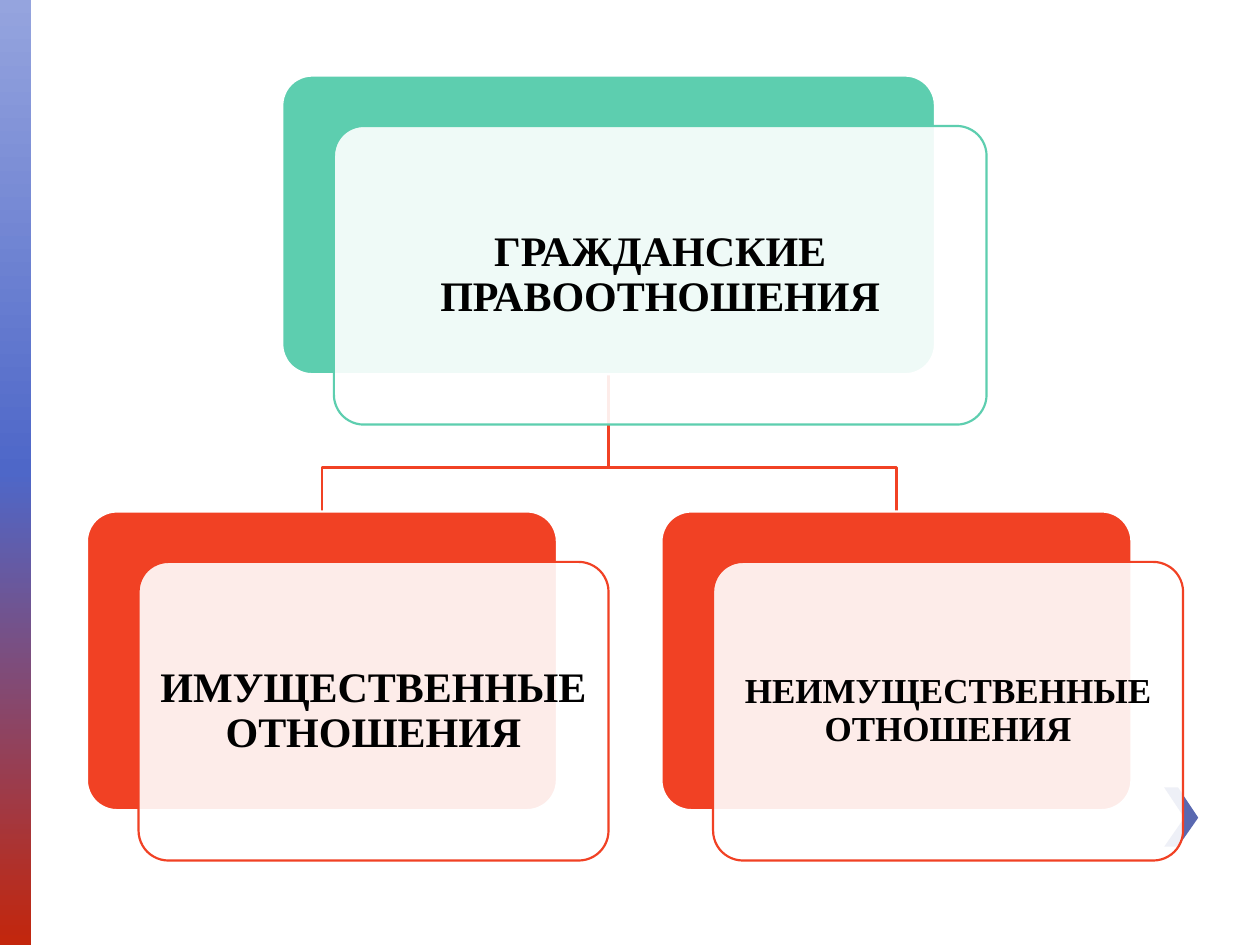
import copy

import lxml.etree
import pptx
import pptx.dml.color
import pptx.enum.shapes
import pptx.enum.text
import pptx.oxml.ns
import pptx.util
from pptx.util import Inches

GREEN, RED, WHITE, BLACK = "5DCEAF", "F14124", "FFFFFF", "000000"
CARD_HEIGHT = 2.37
OFFSET_X, OFFSET_Y = 0.41, 0.4


def color(value):
    return pptx.dml.color.RGBColor.from_string(value)


class DiagramSlide:
    font = "Times New Roman"
    line_width = 1.25

    def __init__(self, slide):
        self.slide = slide

    def outline(self, shape, value):
        shape.line.color.rgb = color(value)
        shape.line.width = pptx.util.Pt(self.line_width)

    def gradient_strip(self, left, top, width, height, stops):
        shape = self.slide.shapes.add_shape(
            pptx.enum.shapes.MSO_SHAPE.RECTANGLE,
            Inches(left), Inches(top), Inches(width), Inches(height))
        shape.shadow.inherit = False
        shape.line.fill.background()
        shape.fill.gradient()
        shape.fill.gradient_angle = 270
        stop_list = shape._element.spPr.find(".//" + pptx.oxml.ns.qn("a:gsLst"))
        while len(stop_list) < len(stops):
            stop_list.append(copy.deepcopy(stop_list[-1]))
        for stop, (position, value) in zip(shape.fill.gradient_stops, stops):
            stop.position = position
            stop.color.rgb = color(value)

    def freeform(self, points, fill=None, line=None):
        start, *others = [(Inches(x), Inches(y)) for x, y in points]
        builder = self.slide.shapes.build_freeform(*start)
        builder.add_line_segments(others, close=fill is not None)
        shape = builder.convert_to_shape()
        shape.shadow.inherit = False
        if fill:
            shape.fill.solid()
            shape.fill.fore_color.rgb = color(fill)
        else:
            shape.fill.background()
        if line:
            self.outline(shape, line)
        else:
            shape.line.fill.background()

    def rounded(self, left, top, width, fill, line, opacity=100):
        shape = self.slide.shapes.add_shape(
            pptx.enum.shapes.MSO_SHAPE.ROUNDED_RECTANGLE,
            Inches(left), Inches(top), Inches(width), Inches(CARD_HEIGHT))
        shape.adjustments[0] = 0.1
        shape.shadow.inherit = False
        shape.fill.solid()
        shape.fill.fore_color.rgb = color(fill)
        if opacity < 100:
            fill_color = shape._element.spPr.find(".//" + pptx.oxml.ns.qn("a:srgbClr"))
            lxml.etree.SubElement(fill_color, pptx.oxml.ns.qn("a:alpha"),
                                  val=str(opacity * 1000))
        self.outline(shape, line)
        return shape

    def text(self, shape, content, size, inset):
        frame = shape.text_frame
        frame.word_wrap = True
        frame.vertical_anchor = pptx.enum.text.MSO_ANCHOR.MIDDLE
        frame.margin_left = frame.margin_right = Inches(inset)
        frame.margin_top = frame.margin_bottom = Inches(inset)
        paragraph = frame.paragraphs[0]
        paragraph.alignment = pptx.enum.text.PP_ALIGN.CENTER
        paragraph.line_spacing = 0.9
        run = paragraph.add_run()
        run.text = content
        run.font.name = self.font
        run.font.size = pptx.util.Pt(size)
        run.font.bold = True
        run.font.color.rgb = color(BLACK)

    def card(self, left, top, width, accent, content, size, inset):
        self.rounded(left, top, width, accent, WHITE)
        front = self.rounded(left + OFFSET_X, top + OFFSET_Y, width, WHITE, accent, 90)
        self.text(front, content, size, inset)


def main():
    presentation = pptx.Presentation()
    presentation.slide_width = Inches(10)
    presentation.slide_height = Inches(7.5)
    diagram = DiagramSlide(presentation.slides.add_slide(presentation.slide_layouts[6]))

    diagram.gradient_strip(0, 0, 0.25, 7.5,
                           [(0, "95A4DE"), (0.5, "4E67C8"), (1, "C3260C")])
    diagram.freeform([(9.35, 6.25), (9.24, 6.25), (9.4, 6.49),
                      (9.24, 6.72), (9.35, 6.72), (9.51, 6.49)], fill="5968B0")

    parent_left, parent_top, parent_width = 2.24, 0.6, 5.18
    child_top, child_width = 4.06, 3.73
    children = [(0.69, "ИМУЩЕСТВЕННЫЕ ОТНОШЕНИЯ", 24, 0.09),
                (5.25, "НЕИМУЩЕСТВЕННЫЕ ОТНОШЕНИЯ", 20, 0.08)]

    parent_center = parent_left + parent_width / 2
    parent_bottom = parent_top + CARD_HEIGHT
    branch_y = 3.71
    for left, *_ in reversed(children):
        center = left + child_width / 2
        diagram.freeform([(parent_center, parent_bottom), (parent_center, branch_y),
                          (center, branch_y), (center, child_top)], line=RED)

    diagram.card(parent_left, parent_top, parent_width, GREEN,
                 "ГРАЖДАНСКИЕ ПРАВООТНОШЕНИЯ", 24, 0.1)
    for left, content, size, inset in children:
        diagram.card(left, child_top, child_width, RED, content, size, inset)

    presentation.save("out.pptx")


if __name__ == "__main__":
    main()
